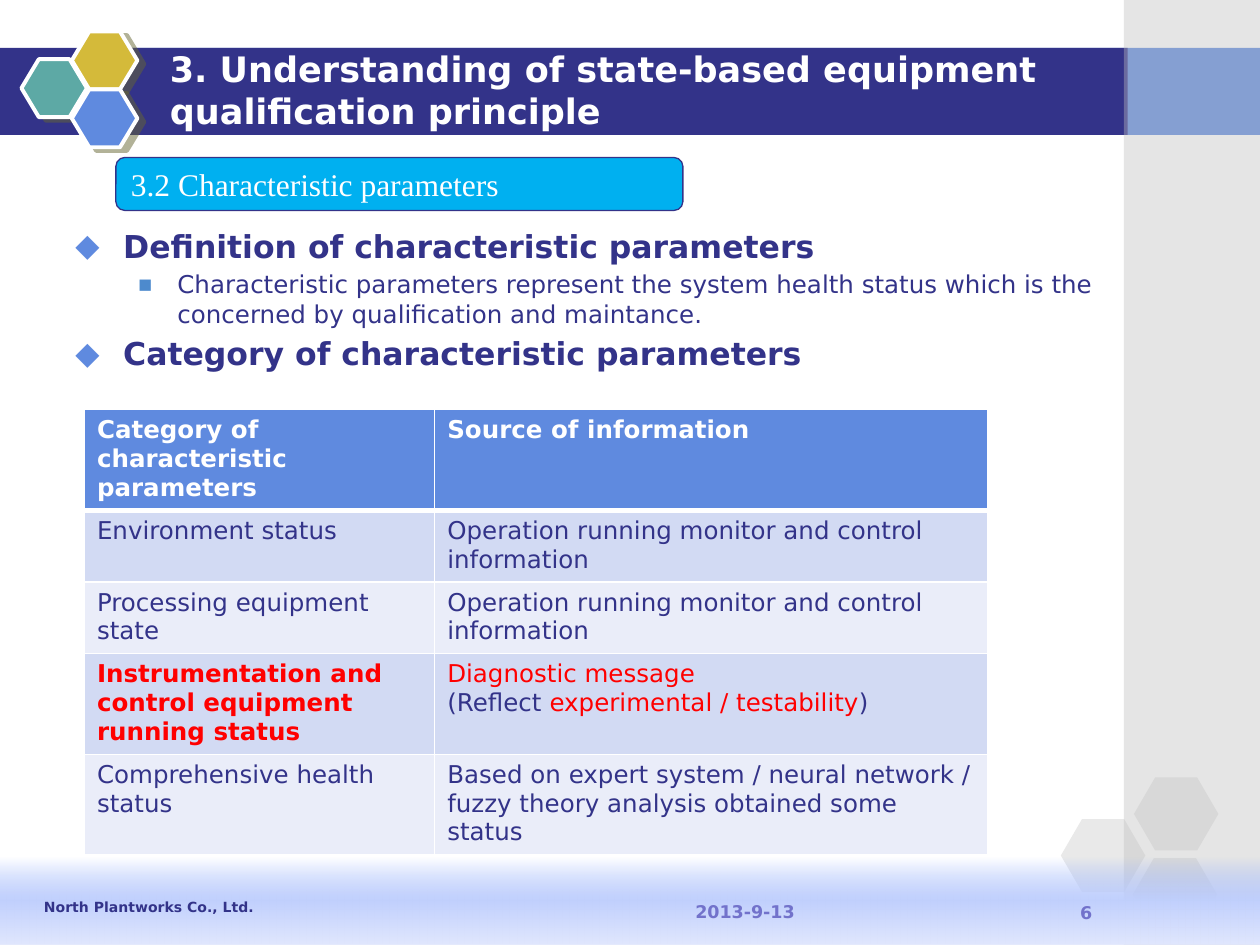
"""Builds the characteristic parameters slide."""
from dataclasses import dataclass

from lxml.etree import SubElement
from pptx import Presentation
from pptx.dml.color import RGBColor
from pptx.enum.shapes import MSO_SHAPE as Shape
from pptx.enum.text import MSO_ANCHOR as Anchor, PP_ALIGN as Align
from pptx.oxml.ns import qn
from pptx.util import Inches, Pt


@dataclass(frozen=True)
class Theme:
    navy: str = "333389"
    blue: str = "5F8ADF"
    steel: str = "4D8ACD"
    sky: str = "00B0F0"
    teal: str = "5DA9A5"
    gold: str = "D4BA3A"
    lilac: str = "7272CB"
    grey: str = "C0C0C0"
    olive: str = "666633"
    white: str = "FFFFFF"
    red: str = "FF0000"
    row_dark: str = "D2DAF3"
    row_light: str = "EAEDF9"
    glow: tuple = (("9AB4FD", 0, 0), ("C1D0FD", 50, 100), ("E1E7FD", 100, 100))
    sans: str = "DejaVu Sans"
    serif: str = "Times New Roman"
    title: int = 20
    heading: int = 18
    text: int = 14
    footer: int = 10
    company: int = 8


def add_node(parent, tag, **attributes):
    node = SubElement(parent, qn(f"a:{tag}"))
    for name, value in attributes.items():
        node.set(name, str(value))
    return node


class SlideBuilder:
    def __init__(self, slide, theme):
        self.shapes = slide.shapes
        self.theme = theme

    def shape(self, kind, frame, fill, alpha=None, line=None, line_width=1, adjust=None):
        shape = self.shapes.add_shape(kind, *map(Inches, frame))
        if adjust is not None:
            shape.adjustments[0] = adjust
        shape.fill.solid()
        shape.fill.fore_color.rgb = RGBColor.from_string(fill)
        if alpha is not None:
            color = shape.element.spPr.find(qn("a:solidFill"))[0]
            add_node(color, "alpha", val=alpha * 1000)
        if line:
            shape.line.color.rgb = RGBColor.from_string(line)
            shape.line.width = Pt(line_width)
        else:
            shape.line.fill.background()
        shape.shadow.inherit = False
        return shape

    def logo_hexagon(self, left, top, fill):
        shape = self.shape(Shape.HEXAGON, (left, top, 0.52, 0.46), fill,
                           line=self.theme.white, line_width=2.25, adjust=0.3)
        effects = shape.element.spPr.find(qn("a:effectLst"))
        shadow = add_node(effects, "outerShdw", blurRad=0, dist=Pt(4.5),
                          dir=27 * 60000, algn="ctr", rotWithShape=0)
        color = add_node(shadow, "srgbClr", val=self.theme.olive)
        add_node(color, "alpha", val=50000)

    def glow_band(self, frame):
        shape = self.shape(Shape.RECTANGLE, frame, self.theme.white)
        solid = shape.element.spPr.find(qn("a:solidFill"))
        gradient = add_node(shape.element.spPr, "gradFill", rotWithShape=1)
        stops = add_node(gradient, "gsLst")
        for value, position, alpha in self.theme.glow:
            stop = add_node(stops, "gs", pos=position * 1000)
            add_node(add_node(stop, "srgbClr", val=value), "alpha", val=alpha * 1000)
        add_node(gradient, "lin", ang=90 * 60000, scaled=0)
        shape.element.spPr.replace(solid, gradient)

    def style(self, para, size, color, bold=False, font=None):
        para.font.name = font or self.theme.sans
        para.font.size = Pt(size)
        para.font.bold = bold
        para.font.color.rgb = RGBColor.from_string(color)

    def text(self, frame, words, size, color, bold=True, align=Align.LEFT):
        box = self.shapes.add_textbox(*map(Inches, frame)).text_frame
        box.word_wrap = True
        box.vertical_anchor = Anchor.MIDDLE
        para = box.paragraphs[0]
        para.text = words
        para.alignment = align
        self.style(para, size, color, bold)

    def label(self, frame, words):
        shape = self.shape(Shape.ROUNDED_RECTANGLE, frame, self.theme.sky,
                           line=self.theme.navy, line_width=0.75)
        shape.text_frame.vertical_anchor = Anchor.MIDDLE
        para = shape.text_frame.paragraphs[0]
        para.text = words
        para.alignment = Align.LEFT
        self.style(para, self.theme.heading, self.theme.white, font=self.theme.serif)

    def bullets(self, frame, items):
        theme = self.theme
        looks = (
            (theme.heading, True, 0.38, 0.38, "◆", theme.blue, 100),
            (theme.text, False, 0.81, 0.31, "■", theme.steel, 60),
        )
        box = self.shapes.add_textbox(*map(Inches, frame)).text_frame
        box.word_wrap = True
        for index, (level, words) in enumerate(items):
            size, bold, margin, hang, mark, mark_color, mark_size = looks[level]
            para = box.add_paragraph() if index else box.paragraphs[0]
            para.text = words
            para.level = level
            para.space_before = Pt(size * 0.2 if index else 0)
            self.style(para, size, theme.navy, bold)
            properties = para._p.get_or_add_pPr()
            properties.set("marL", str(Inches(margin)))
            properties.set("indent", str(-Inches(hang)))
            nodes = [
                add_node(properties, "buClr"),
                add_node(properties, "buSzPct", val=mark_size * 1000),
                add_node(properties, "buFont", typeface=theme.sans),
                add_node(properties, "buChar", char=mark),
            ]
            add_node(nodes[0], "srgbClr", val=mark_color)
            default_font = properties.find(qn("a:defRPr"))
            for node in nodes:
                default_font.addprevious(node)

    def border(self, cell, widths):
        properties = cell._tc.get_or_add_tcPr()
        for index, (side, width) in enumerate(zip("LRTB", widths)):
            line = add_node(properties, f"ln{side}", w=Pt(width))
            add_node(add_node(line, "solidFill"), "srgbClr", val=self.theme.white)
            properties.insert(index, line)

    def table(self, left, top, widths, heights, rows):
        theme = self.theme
        table = self.shapes.add_table(
            len(rows), len(widths), Inches(left), Inches(top),
            Inches(sum(widths)), Inches(sum(heights))).table
        for column, width in zip(table.columns, widths):
            column.width = Inches(width)
        for index, (height, row) in enumerate(zip(heights, rows)):
            table.rows[index].height = Inches(height)
            fill = theme.row_dark if index % 2 else theme.row_light
            for cell, (bold, paragraphs) in zip(table.rows[index].cells, row):
                cell.fill.solid()
                cell.fill.fore_color.rgb = RGBColor.from_string(fill if index else theme.blue)
                self.border(cell, (1, 1, 3 if index == 1 else 1, 1 if index else 3))
                for number, spans in enumerate(paragraphs):
                    box = cell.text_frame
                    para = box.add_paragraph() if number else box.paragraphs[0]
                    self.style(para, theme.text, spans[0][1], bold)
                    for words, color in spans:
                        span = para.add_run()
                        span.text = words
                        span.font.color.rgb = RGBColor.from_string(color)


def main():
    theme = Theme()
    deck = Presentation()
    deck.slide_width, deck.slide_height = Inches(10), Inches(7.5)
    page = SlideBuilder(deck.slides.add_slide(deck.slide_layouts[6]), theme)

    page.shape(Shape.RECTANGLE, (1.04, 0.38, 8.96, 0.69), theme.blue)
    page.shape(Shape.RECTANGLE, (0, 0.38, 8.95, 0.69), theme.navy)
    page.shape(Shape.RECTANGLE, (8.92, 0, 1.08, 7.5), theme.grey, alpha=40)
    for left, top, fill in ((0.17, 0.47, theme.teal), (0.57, 0.25, theme.gold),
                            (0.57, 0.71, theme.blue)):
        page.logo_hexagon(left, top, fill)
    for left, top in ((8.42, 6.5), (9, 6.17), (8.99, 6.81)):
        page.shape(Shape.HEXAGON, (left, top, 0.67, 0.58), theme.grey, alpha=35, adjust=0.29)
    page.glow_band((0, 6.81, 10, 0.69))

    page.text((1.25, 0.42, 7.6, 0.58),
              "3. Understanding of state-based equipment qualification principle",
              theme.title, theme.white)
    page.bullets((0.5, 1.75, 8.5, 1.4), (
        (0, "Definition of characteristic parameters"),
        (1, "Characteristic parameters represent the system health status which is the "
            "concerned by qualification and maintance."),
        (0, "Category of characteristic parameters"),
    ))
    page.text((5.42, 7.11, 2.75, 0.25), "2013-9-13", theme.footer, theme.lilac)
    page.text((8.33, 7.1, 0.58, 0.29), "6", theme.footer, theme.lilac, align=Align.CENTER)

    def plain(words, color=theme.navy, bold=False):
        return bold, [[(words, color)]]

    monitoring = plain("Operation running monitor and control information")
    diagnosis = (False, [
        [("Diagnostic message", theme.red)],
        [("(Reflect ", theme.navy), ("experimental / testability", theme.red), (")", theme.navy)],
    ])
    page.table(0.67, 3.25, (2.78, 4.39), (0.78, 0.56, 0.56, 0.78, 0.78), (
        (plain("Category of characteristic parameters", theme.white, True),
         plain("Source of information", theme.white, True)),
        (plain("Environment status"), monitoring),
        (plain("Processing equipment state"), monitoring),
        (plain("Instrumentation and control equipment running status", theme.red, True), diagnosis),
        (plain("Comprehensive health status"),
         plain("Based on expert system / neural network / fuzzy theory analysis "
               "obtained some status")),
    ))
    page.label((0.92, 1.25, 4.5, 0.42), "3.2 Characteristic parameters")
    page.text((0.25, 7.08, 3.58, 0.24), "North Plantworks Co., Ltd.", theme.company, theme.navy)
    deck.save("out.pptx")


if __name__ == "__main__":
    main()
